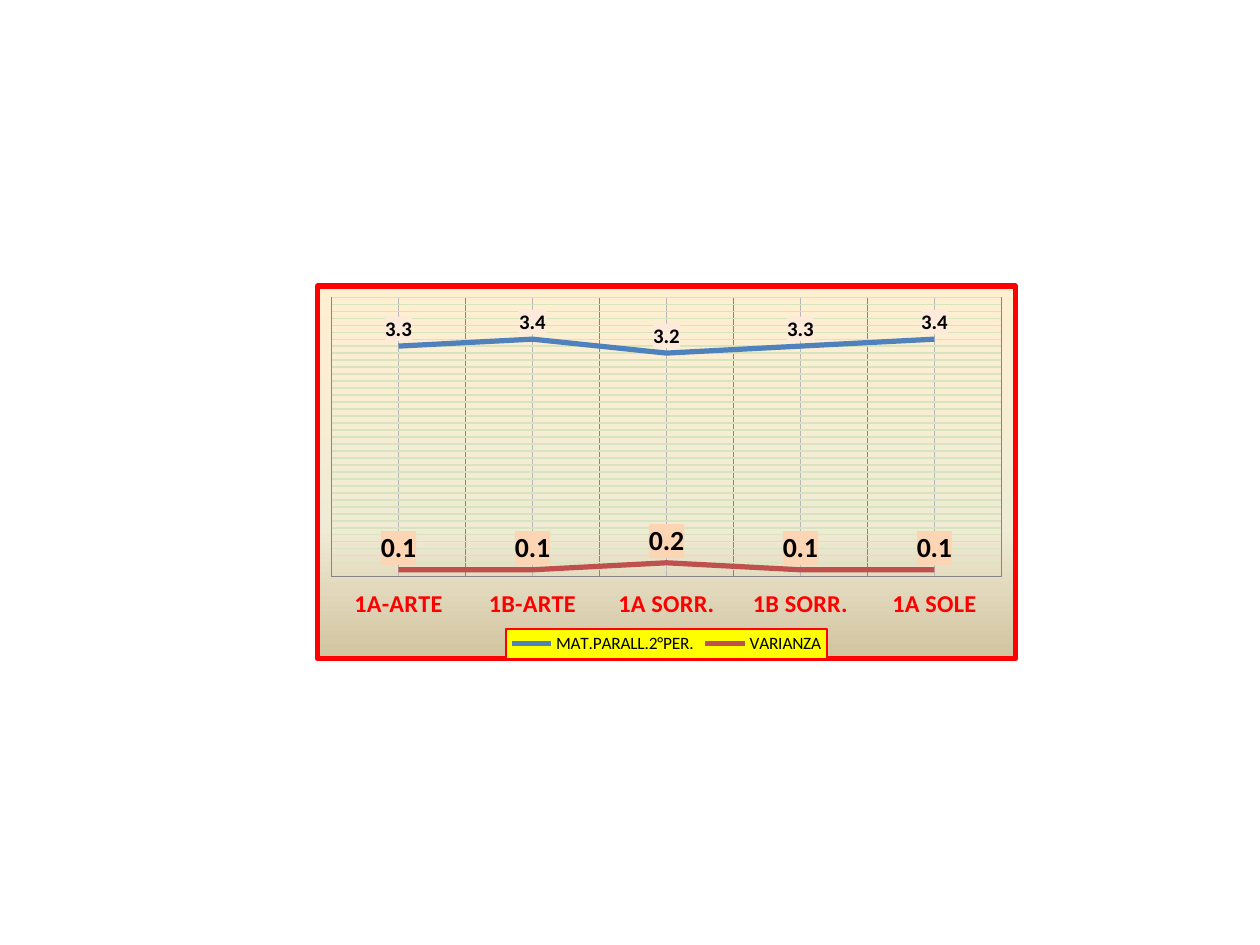
from lxml import etree
from pptx import Presentation
from pptx.chart.data import CategoryChartData
from pptx.dml.color import RGBColor
from pptx.enum.chart import XL_CHART_TYPE, XL_LABEL_POSITION, XL_LEGEND_POSITION
from pptx.enum.chart import XL_MARKER_STYLE, XL_TICK_LABEL_POSITION, XL_TICK_MARK
from pptx.oxml import parse_xml
from pptx.oxml.ns import nsdecls, qn
from pptx.util import Inches, Pt

LINE = XL_CHART_TYPE.LINE
ABOVE = XL_LABEL_POSITION.ABOVE
BOTTOM = XL_LEGEND_POSITION.BOTTOM
BARE = XL_MARKER_STYLE.NONE
LOW = XL_TICK_LABEL_POSITION.LOW
NO_TICK = XL_TICK_MARK.NONE
FONT = "Calibri"
CATS = ["1A-ARTE", "1B-ARTE", "1A SORR.", "1B SORR.", "1A SOLE"]
SERIES = [
    ("MAT.PARALL.2°PER.", [3.3, 3.4, 3.2, 3.3, 3.4], "4F81BD", 12, "FDEADA"),
    ("VARIANZA", [0.1, 0.1, 0.2, 0.1, 0.1], "C0504D", 16, "FCD5B5"),
]
STOPS = [(0, "FFEFD1"), (65, "F0EBD5"), (100, "D1C39F")]


def rgb(code):
    """Turn a hex string into a colour."""
    return RGBColor.from_string(code)


def style(font, size, color="000000", bold=False):
    """Set the look of a font."""
    font.name, font.size, font.bold = FONT, Pt(size), bold
    font.color.rgb = rgb(color)


def solid(code):
    """Give the XML of a solid fill."""
    return f'<a:solidFill><a:srgbClr val="{code}"/></a:solidFill>'


def blend(stops):
    """Give the XML of a gradient that runs downwards."""
    marks = "".join(
        f'<a:gs pos="{pos * 1000}"><a:srgbClr val="{code}"/></a:gs>'
        for pos, code in stops
    )
    return (f'<a:gradFill><a:gsLst>{marks}</a:gsLst>'
            '<a:lin ang="5400000" scaled="0"/></a:gradFill>')


def skin(fill="", line=None, width=0.75):
    """Make the shape properties of a chart part."""
    edge = solid(line) if line else "<a:noFill/>"
    return parse_xml(f'<c:spPr {nsdecls("c", "a")}>{fill}'
                     f'<a:ln w="{int(Pt(width))}">{edge}</a:ln></c:spPr>')


def dress(part, *look):
    """Put shape properties before the text properties of a part."""
    part.find(qn("c:txPr")).addprevious(skin(*look))


def place(part, index, x, y, w, h, inner=False):
    """Fix a part at shares of the chart's size."""
    for old in part.findall(qn("c:layout")):
        part.remove(old)
    layout = etree.Element(qn("c:layout"))
    manual = etree.SubElement(layout, qn("c:manualLayout"))
    pairs = [("layoutTarget", "inner")] if inner else []
    pairs += [("xMode", "edge"), ("yMode", "edge"),
              ("x", x), ("y", y), ("w", w), ("h", h)]
    for tag, val in pairs:
        etree.SubElement(manual, qn(f"c:{tag}")).set("val", str(val))
    part.insert(index, layout)


def rule(axis, color):
    """Show the major gridlines of an axis."""
    line = axis.major_gridlines.format.line
    line.color.rgb, line.width = rgb(color), Pt(0.75)


def set_axes(chart):
    """Format both axes and their gridlines."""
    cat, val = chart.category_axis, chart.value_axis
    rule(cat, "868686")
    cat.has_minor_gridlines = True
    minor = cat._element.find(qn("c:minorGridlines"))
    minor.append(skin("", "B7B7B7"))
    cat.major_tick_mark = NO_TICK
    cat.tick_label_position = LOW
    cat.format.line.color.rgb = rgb("868686")
    style(cat.tick_labels.font, 14, "FF0000", True)
    val.minimum_scale, val.maximum_scale, val.major_unit = 0, 4, 0.1
    rule(val, "D7E4BD")
    val.visible = False


def set_line(line, color, size, fill):
    """Format one series and its labels."""
    line.smooth = False
    line.marker.style = BARE
    line.format.line.color.rgb = rgb(color)
    line.format.line.width = Pt(3)
    tags = line.data_labels
    tags.show_value, tags.position = True, ABOVE
    tags.number_format, tags.number_format_is_linked = "0.0", False
    style(tags.font, size, bold=True)
    dress(tags._element, solid(fill))


def set_legend(chart):
    """Add the framed legend."""
    chart.has_legend = True
    legend = chart.legend
    legend.position, legend.include_in_layout = BOTTOM, False
    style(legend.font, 10)
    dress(legend._element, solid("FFFF00"), "FF0000")
    place(legend._element, 1, 0.27, 0.92, 0.46, 0.08)


def add_lines(slide):
    """Add the line chart."""
    data = CategoryChartData(number_format="0.0")
    data.categories = CATS
    for name, vals, *_ in SERIES:
        data.add_series(name, vals)
    spot = [Inches(n) for n in (2.5, 2.25, 5.58, 3)]
    chart = slide.shapes.add_chart(LINE, *spot, data).chart
    chart.has_title = False
    style(chart.font, 10)
    chart.plots[0].vary_by_categories = False
    set_axes(chart)
    for line, (_, _, *look) in zip(chart.plots[0].series, SERIES):
        set_line(line, *look)
    set_legend(chart)
    room = chart._chartSpace
    dress(room, blend(STOPS), "FF0000", 3)
    place(room.chart.plotArea, 0, 0.02, 0.03, 0.96, 0.75, True)


def main():
    """Build and save the slide."""
    deck = Presentation()
    deck.slide_width, deck.slide_height = Inches(10), Inches(7.5)
    add_lines(deck.slides.add_slide(deck.slide_layouts[6]))
    deck.save("out.pptx")


if __name__ == "__main__":
    main()
